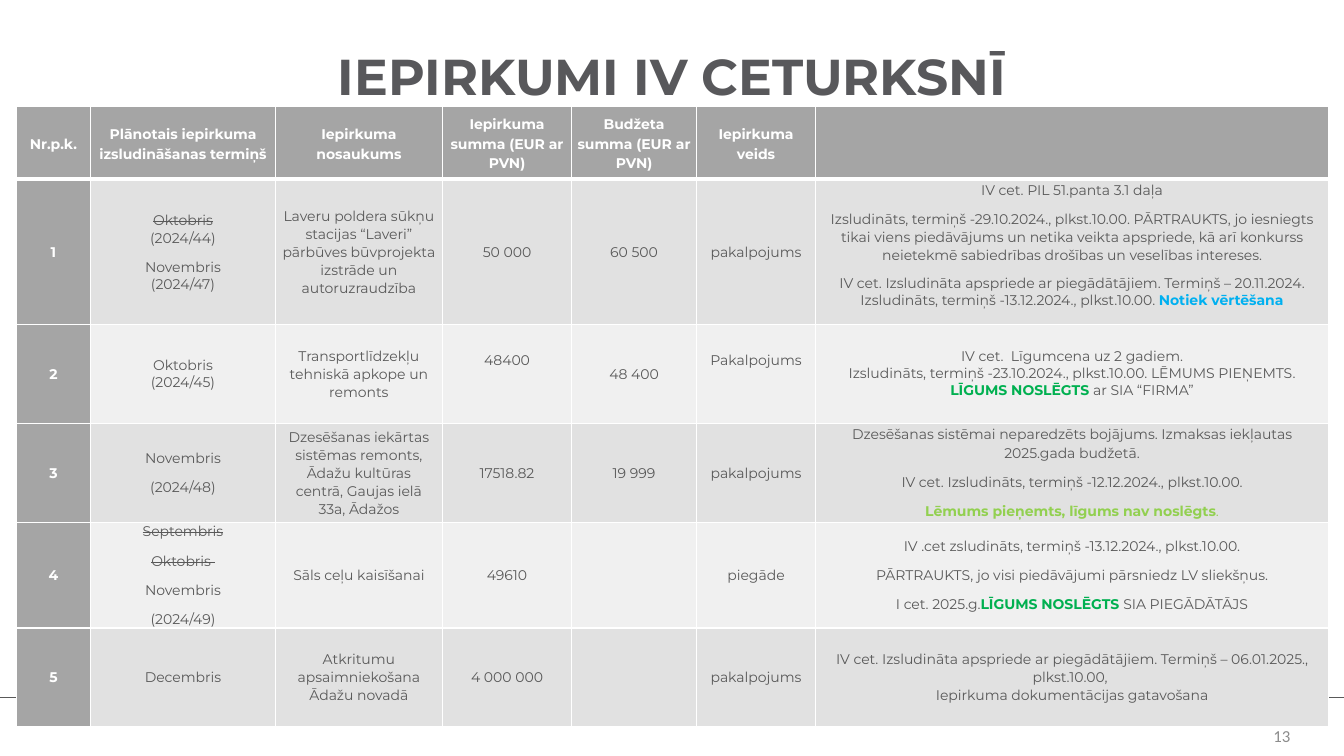
from pptx import Presentation
from pptx.dml.color import RGBColor
from pptx.enum.shapes import MSO_CONNECTOR as Connector
from pptx.enum.text import MSO_ANCHOR as Anchor, MSO_AUTO_SIZE as AutoSize, PP_ALIGN as Align
from pptx.oxml import parse_xml
from pptx.oxml.ns import nsdecls
from pptx.util import Pt

WHITE, GREY, TEXT, TITLE = "FFFFFF", "A5A5A5", "595959", "58585B"
BANDS = ["E1E1E1", "F0F0F0"]


# Content helpers: a span is a string or (text, format); a paragraph is a string or a list of spans
def strike(text):
    return text, {"struck": True}


def strong(text, color):
    return text, {"bold": True, "color": color}


def tight(*spans, after=0):
    return {"spans": list(spans), "line": 1.0, "after": after}


SIGNED = strong("LĪGUMS NOSLĒGTS ", "00B050")

# Content
HEADING = "IEPIRKUMI IV CETURKSNĪ"
PAGE_NUMBER = "13"
HEADERS = ["Nr.p.k.", "Plānotais iepirkuma izsludināšanas termiņš", "Iepirkuma nosaukums",
           "Iepirkuma summa (EUR ar PVN)", "Budžeta summa (EUR ar PVN)", "Iepirkuma veids", ""]
PURCHASES = [
    ["1",
     [[strike("Oktobris\n"), "(2024/44)"], tight("Novembris"), tight("(2024/47)")],
     "Laveru poldera sūkņu stacijas “Laveri” pārbūves būvprojekta izstrāde un autoruzraudzība",
     "50 000", "60 500", "pakalpojums",
     ["IV cet. PIL 51.panta 3.1 daļa",
      "Izsludināts, termiņš -29.10.2024., plkst.10.00. PĀRTRAUKTS, jo iesniegts tikai viens "
      "piedāvājums un netika veikta apspriede, kā arī konkurss neietekmē sabiedrības drošības "
      "un veselības intereses.",
      tight("IV cet. Izsludināta apspriede ar piegādātājiem. Termiņš – 20.11.2024. "
            "Izsludināts, termiņš -13.12.2024., plkst.10.00. ",
            strong("Notiek vērtēšana", "00B0F0"))]],
    ["2",
     [tight("Oktobris"), tight("(2024/45)")],
     "Transportlīdzekļu tehniskā apkope un remonts",
     "48400", "48 400", "Pakalpojums",
     [tight("IV cet.  Līgumcena uz 2 gadiem."),
      tight("Izsludināts, termiņš -23.10.2024., plkst.10.00. LĒMUMS PIEŅEMTS.\n",
            SIGNED, "ar SIA “FIRMA”")]],
    ["3",
     ["Novembris", "(2024/48)"],
     "Dzesēšanas iekārtas sistēmas remonts, Ādažu kultūras centrā, Gaujas ielā 33a, Ādažos",
     "17518.82", "19 999", "pakalpojums",
     ["Dzesēšanas sistēmai neparedzēts bojājums. Izmaksas iekļautas 2025.gada budžetā.",
      "IV cet. Izsludināts, termiņš -12.12.2024., plkst.10.00.",
      [strong("Lēmums pieņemts, līgums nav noslēgts", "92D050"), (".", {"color": "92D050"})]]],
    ["4",
     [[strike("Septembris")], [strike("Oktobris ")], "Novembris", "(2024/49)"],
     "Sāls ceļu kaisīšanai",
     "49610", "", "piegāde",
     ["IV .cet zsludināts, termiņš -13.12.2024., plkst.10.00.",
      "PĀRTRAUKTS, jo visi piedāvājumi pārsniedz LV sliekšņus.",
      ["I cet. 2025.g.", SIGNED, "SIA PIEGĀDĀTĀJS"]]],
    ["5",
     "Decembris",
     "Atkritumu apsaimniekošana Ādažu novadā",
     "4 000 000", "", "pakalpojums",
     "IV cet. Izsludināta apspriede ar piegādātājiem. Termiņš – 06.01.2025., plkst.10.00, \n"
     "Iepirkuma dokumentācijas gatavošana"],
]

# Measures in points
PAGE = (960, 540)
TABLE_LEFT, TABLE_TOP = 11.5, 76.3
COLUMNS = [53.3, 131.8, 119.5, 92.2, 89.3, 85, 366.4]
ROWS = [51.8, 103.7, 70.6, 70.6, 75.6, 70.2]
RAISED = {(1, 6): 10, (2, 3): 20, (2, 5): 20}  # (row, column): bottom margin


def rgb(color):
    return RGBColor.from_string(color)


def write(frame, paragraphs, size=10, font="Montserrat", color=TEXT, bold=False,
          align=Align.CENTER, line=1.07, after=8):
    if isinstance(paragraphs, str):
        paragraphs = [paragraphs]
    frame.word_wrap = True
    for index, item in enumerate(paragraphs):
        para = frame.paragraphs[0] if index == 0 else frame.add_paragraph()
        layout = item if isinstance(item, dict) else {"spans": item, "line": line, "after": after}
        para.alignment = align
        para.line_spacing = layout["line"]
        para.space_before, para.space_after = Pt(0), Pt(layout["after"])
        spans = layout["spans"]
        for span in [spans] if isinstance(spans, str) else spans:
            text, style = (span, {}) if isinstance(span, str) else span
            for number, piece in enumerate(text.split("\n")):
                if number:
                    para.add_line_break()
                if not piece:
                    continue
                run = para.add_run()
                run.text = piece
                run.font.name, run.font.size = font, Pt(size)
                run.font.bold = style.get("bold", bold)
                run.font.color.rgb = rgb(style.get("color", color))
                if style.get("struck"):
                    run.font._element.set("strike", "sngStrike")


def add_borders(cell, bottom):
    properties = cell._tc.get_or_add_tcPr()
    for index, (side, width) in enumerate({"L": 1, "R": 1, "T": 1, "B": bottom}.items()):
        properties.insert(index, parse_xml(
            f'<a:ln{side} {nsdecls("a")} w="{Pt(width)}"><a:solidFill>'
            f'<a:srgbClr val="{WHITE}"/></a:solidFill></a:ln{side}>'))


deck = Presentation()
deck.slide_width, deck.slide_height = Pt(PAGE[0]), Pt(PAGE[1])
page = deck.slides.add_slide(deck.slide_layouts[5])

# Title
title = page.shapes.title
title.left, title.top, title.width, title.height = Pt(66), Pt(28.8), Pt(828), Pt(56.2)
title.text_frame.auto_size = AutoSize.NONE
title.text_frame.vertical_anchor = Anchor.MIDDLE
write(title.text_frame, HEADING, size=36, color=TITLE, bold=True, line=0.9, after=0)

# Page number
number_box = page.shapes.add_textbox(Pt(712.8), Pt(511.2), Pt(216), Pt(28.8))
number_box.text_frame.vertical_anchor = Anchor.MIDDLE
write(number_box.text_frame, PAGE_NUMBER, size=12, font="Calibri", color="8C8C8C",
      align=Align.RIGHT, line=1.0, after=0)

# Footer line
footer = page.shapes.add_connector(Connector.STRAIGHT, Pt(0), Pt(498.2), Pt(960), Pt(498.2))
footer.line.color.rgb = rgb(TEXT)
footer.line.width = Pt(0.75)
footer._element.spPr.append(parse_xml(f'<a:effectLst {nsdecls("a")}/>'))

# Table of purchases
table = page.shapes.add_table(len(ROWS), len(COLUMNS), Pt(TABLE_LEFT), Pt(TABLE_TOP),
                              Pt(sum(COLUMNS)), Pt(sum(ROWS))).table
for column, width in zip(table.columns, COLUMNS):
    column.width = Pt(width)
for row, height in zip(table.rows, ROWS):
    row.height = Pt(height)

for r, values in enumerate([HEADERS] + PURCHASES):
    for c, value in enumerate(values):
        cell = table.cell(r, c)
        is_header = r == 0
        is_dark = is_header or c == 0
        cell.vertical_anchor = Anchor.MIDDLE
        cell.margin_left = cell.margin_right = Pt(2.2 if is_header else 5)
        cell.margin_top, cell.margin_bottom = Pt(0), Pt(RAISED.get((r, c), 0))
        cell.fill.solid()
        cell.fill.fore_color.rgb = rgb(GREY if is_dark else BANDS[(r - 1) % 2])
        add_borders(cell, bottom=3 if is_header else 1)
        write(cell.text_frame, value, color=WHITE if is_dark else TEXT, bold=is_dark,
              line=1.15 if is_header else 1.07)

deck.save("out.pptx")
